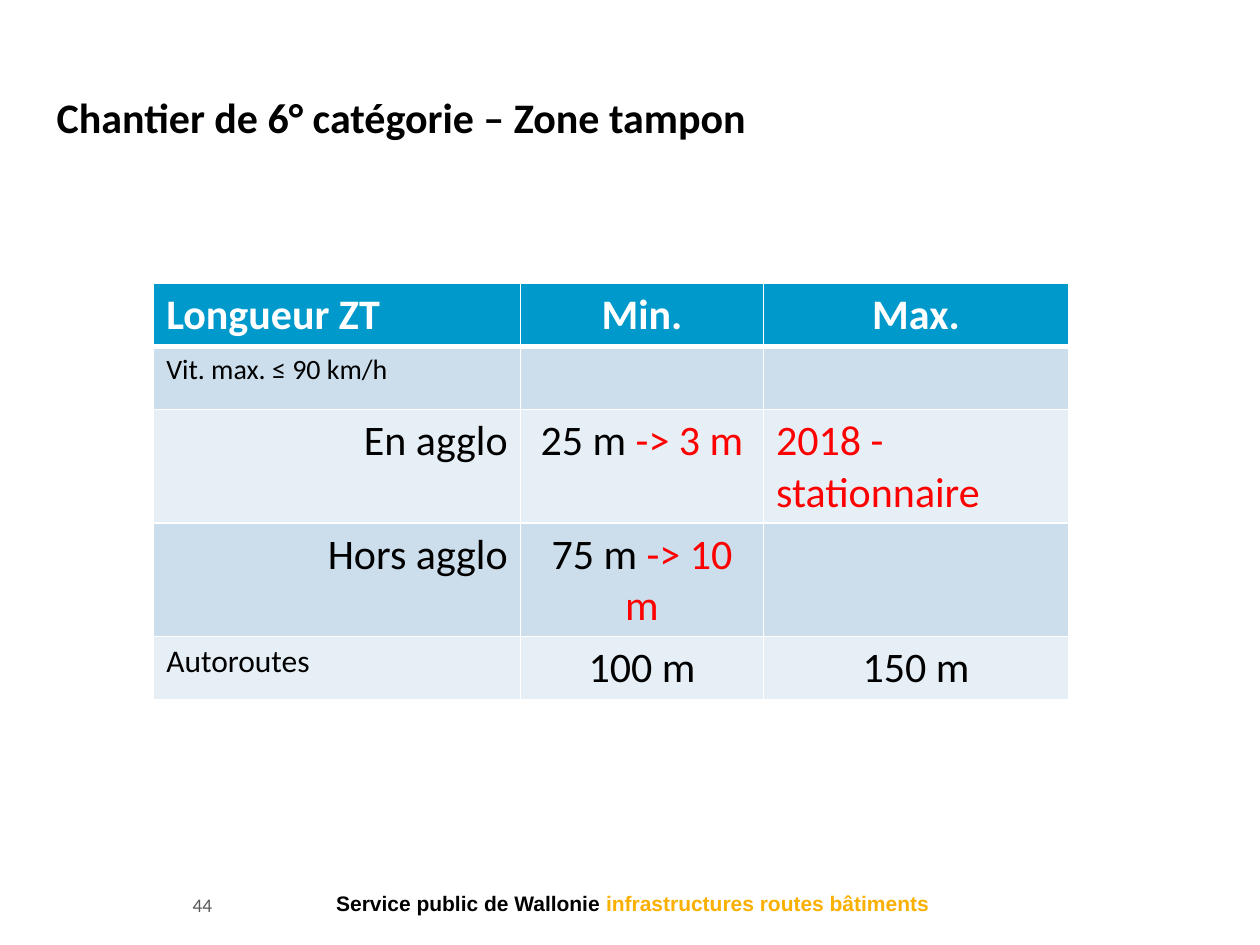
from lxml.etree import SubElement
from pptx import Presentation
from pptx.dml.color import RGBColor
from pptx.enum.text import MSO_ANCHOR, MSO_AUTO_SIZE, PP_ALIGN
from pptx.oxml.ns import qn
from pptx.util import Inches, Pt

BLACK = RGBColor(0x00, 0x00, 0x00)
WHITE = RGBColor(0xFF, 0xFF, 0xFF)
RED = RGBColor(0xFF, 0x00, 0x00)
GREY = RGBColor(0x59, 0x59, 0x59)
YELLOW = RGBColor(0xF9, 0xB0, 0x00)
HEADER_BLUE = RGBColor(0x00, 0x99, 0xCC)
BANDS = (RGBColor(0xCC, 0xDE, 0xEC), RGBColor(0xE7, 0xEF, 0xF6))

LEFT, CENTER, RIGHT = PP_ALIGN.LEFT, PP_ALIGN.CENTER, PP_ALIGN.RIGHT
COLUMN_WIDTHS = (2.91, 1.93, 2.42)
ROW_HEIGHTS = (0.41, 0.49, 0.41, 0.41, 0.41)

# Each cell: alignment, size, then (text, colour) spans.
EMPTY = (LEFT, 24)
ROWS = (
    ((LEFT, 24, ("Longueur ZT", WHITE)),
     (CENTER, 24, ("Min.", WHITE)),
     (CENTER, 24, ("Max.", WHITE))),
    ((LEFT, 16, ("Vit. max. ≤ 90 km/h", BLACK)), EMPTY, EMPTY),
    ((RIGHT, 24, ("En agglo", BLACK)),
     (CENTER, 24, ("25 m ", BLACK), ("-> 3 m", RED)),
     (LEFT, 24, ("2018 - stationnaire", RED))),
    ((RIGHT, 24, ("Hors agglo", BLACK)),
     (CENTER, 24, ("75 m ", BLACK), ("-> 10 m", RED)),
     EMPTY),
    ((LEFT, 18, ("Autoroutes", BLACK)),
     (CENTER, 24, ("100 m", BLACK)),
     (CENTER, 24, ("150 m", BLACK))),
)


def write_spans(para, spans, size, align=LEFT, bold=False, font="Calibri"):
    para.alignment = align
    para.font.name = font
    para.font.size = Pt(size)
    para.font.bold = bold
    for text, colour in spans:
        span = para.add_run()
        span.text = text
        span.font.color.rgb = colour


def add_title(slide, text):
    title = slide.shapes.title
    title.left, title.top = Inches(0.35), Inches(0.68)
    title.width, title.height = Inches(9.49), Inches(5.14)
    frame = title.text_frame
    frame.vertical_anchor = MSO_ANCHOR.TOP
    frame.auto_size = MSO_AUTO_SIZE.NONE
    write_spans(frame.paragraphs[0], [(text, BLACK)], 24, bold=True)


def add_label(slide, left, top, width, height, side_inset=0.1):
    """Add a vertically centred text box and return its paragraph."""
    box = slide.shapes.add_textbox(
        Inches(left), Inches(top), Inches(width), Inches(height))
    frame = box.text_frame
    frame.word_wrap = True
    frame.vertical_anchor = MSO_ANCHOR.MIDDLE
    frame.margin_left = frame.margin_right = Inches(side_inset)
    return frame.paragraphs[0]


def set_borders(cell, bottom_width):
    properties = cell._tc.get_or_add_tcPr()
    for side, width in (("L", 1), ("R", 1), ("T", 1), ("B", bottom_width)):
        line = SubElement(properties, qn(f"a:ln{side}"), w=str(Pt(width)))
        fill = SubElement(line, qn("a:solidFill"))
        SubElement(fill, qn("a:srgbClr"), val=str(WHITE))


def add_length_table(slide):
    table = slide.shapes.add_table(
        len(ROWS), len(COLUMN_WIDTHS), Inches(1.22), Inches(2.25),
        Inches(sum(COLUMN_WIDTHS)), Inches(sum(ROW_HEIGHTS))).table
    for column, width in zip(table.columns, COLUMN_WIDTHS):
        column.width = Inches(width)
    for index, (row, height) in enumerate(zip(table.rows, ROW_HEIGHTS)):
        row.height = Inches(height)
        is_header = index == 0
        for cell, (align, size, *spans) in zip(row.cells, ROWS[index]):
            set_borders(cell, 3 if is_header else 1)
            cell.fill.solid()
            cell.fill.fore_color.rgb = (
                HEADER_BLUE if is_header else BANDS[(index - 1) % 2])
            write_spans(cell.text_frame.paragraphs[0], spans, size, align,
                        bold=is_header)


def main():
    deck = Presentation()
    deck.slide_width, deck.slide_height = Inches(10), Inches(7.5)
    slide = deck.slides.add_slide(deck.slide_layouts[5])
    add_title(slide, "Chantier de 6° catégorie – Zone tampon")
    footer = add_label(slide, -1.3, 7.03, 8.82, 0.28)
    write_spans(footer, [("Service public de Wallonie ", BLACK),
                         ("infrastructures routes bâtiments ", YELLOW)],
                12, RIGHT, bold=True, font="Arial")
    page_number = add_label(slide, 1.53, 7.08, 1.97, 0.2, side_inset=0)
    write_spans(page_number, [("44", GREY)], 11)
    add_length_table(slide)
    deck.save("out.pptx")


if __name__ == "__main__":
    main()
